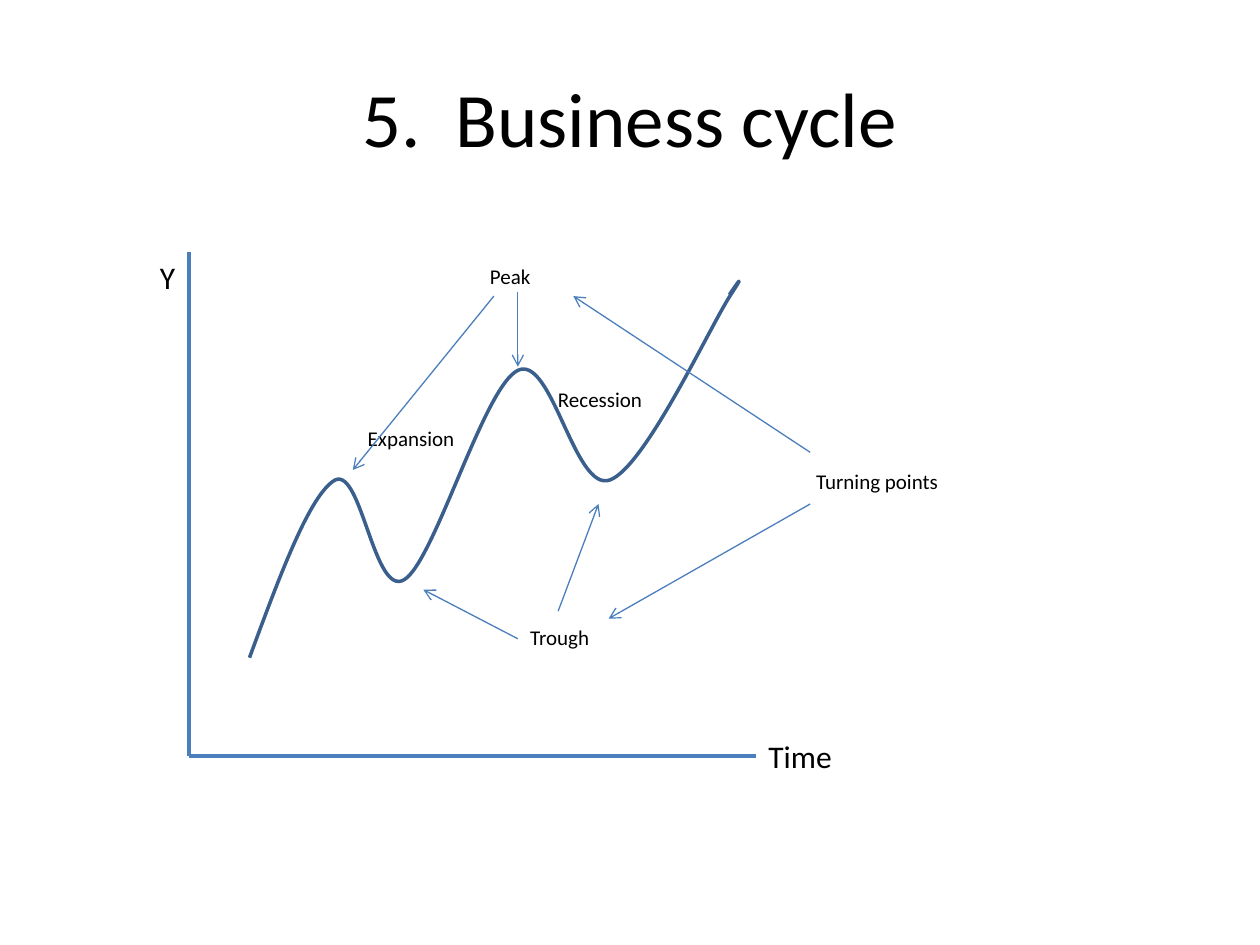
from lxml import etree
from pptx import Presentation
from pptx import util as u
from pptx.dml.color import RGBColor
from pptx.enum import shapes, text
from pptx.oxml.ns import qn

BLUE, NAVY, BLACK = "4B7EBC", "3A5F8C", "000000"
START = (1.98, 5.22)
# Each Bézier segment: two control points and an end point
CURVES = [
    (2.22, 4.57), (2.46, 3.92), (2.66, 3.81),
    (2.87, 3.71), (2.97, 4.75), (3.21, 4.6),
    (3.45, 4.45), (3.84, 3.07), (4.11, 2.94),
    (4.38, 2.81), (4.56, 3.91), (4.84, 3.81),
    (5.12, 3.71), (5.64, 2.58), (5.8, 2.34),
    (5.96, 2.09), (5.78, 2.35), (5.79, 2.34),
]
LABELS = [
    ("Expansion", (2.82, 3.33, 1.29, 0.3)),
    ("Recession", (4.33, 3.02, 1.29, 0.3)),
    ("Peak", (3.79, 2.04, 0.65, 0.31)),
    ("Trough", (4.11, 4.91, 0.88, 0.31)),
    ("Turning points", (6.38, 3.67, 1.17, 0.3)),
]
ARROWS = [
    ((4.11, 2.32), (4.11, 2.91)),
    ((3.92, 2.35), (2.8, 3.73)),
    ((4.11, 5.07), (3.36, 4.68)),
    ((4.43, 4.85), (4.75, 4)),
    ((6.43, 3.59), (4.55, 2.35)),
    ((6.43, 4), (4.83, 4.91)),
]


def color(code):
    return RGBColor.from_string(code)


def stroke(line, code, width):
    line.color.rgb = color(code)
    line.width = u.Pt(width)


def write(slide, words, box, size=12, align=text.PP_ALIGN.LEFT,
          anchor=text.MSO_ANCHOR.TOP):
    frame = slide.shapes.add_textbox(*map(u.Inches, box)).text_frame
    frame.word_wrap = True
    frame.vertical_anchor = anchor
    para = frame.paragraphs[0]
    para.alignment = align
    run = para.add_run()
    run.text = words
    run.font.name = "Calibri"
    run.font.size = u.Pt(size)
    run.font.color.rgb = color(BLACK)


def rule(slide, start, end, width=2, arrow=False):
    line = slide.shapes.add_connector(
        shapes.MSO_CONNECTOR.STRAIGHT, *map(u.Inches, start + end))
    stroke(line.line, BLUE, width)
    props = line._element.spPr
    if arrow:
        etree.SubElement(props.find(qn("a:ln")), qn("a:tailEnd"), type="arrow")
    etree.SubElement(props, qn("a:effectLst"))


def bend(shape):
    """Turn every three straight segments into one cubic Bézier."""
    lines = list(shape._element.iter(qn("a:lnTo")))
    for i in range(0, len(lines), 3):
        curve = etree.Element(qn("a:cubicBezTo"))
        lines[i].addprevious(curve)
        for line in lines[i:i + 3]:
            curve.append(line[0])
            line.getparent().remove(line)


def wave(slide):
    outline = slide.shapes.build_freeform(*map(u.Inches, START))
    outline.add_line_segments(
        [tuple(map(u.Inches, point)) for point in CURVES], close=False)
    shape = outline.convert_to_shape()
    bend(shape)
    shape.shadow.inherit = False
    shape.fill.background()
    stroke(shape.line, NAVY, 2)


def main():
    deck = Presentation()
    deck.slide_width, deck.slide_height = u.Inches(10), u.Inches(7.5)
    slide = deck.slides.add_slide(deck.slide_layouts[6])

    write(slide, "5.  Business cycle", (0.5, 0.3, 9, 1.25), size=44,
          align=text.PP_ALIGN.CENTER, anchor=text.MSO_ANCHOR.MIDDLE)
    rule(slide, (1.5, 2), (1.5, 6))
    rule(slide, (6, 6), (1.5, 6))
    write(slide, "Y", (1.17, 2, 0.33, 0.4), size=18)
    write(slide, "Time", (6, 5.8, 0.75, 0.4), size=18)
    wave(slide)
    for words, box in LABELS:
        write(slide, words, box)
    for start, end in ARROWS:
        rule(slide, start, end, width=0.75, arrow=True)
    deck.save("out.pptx")


if __name__ == "__main__":
    main()
